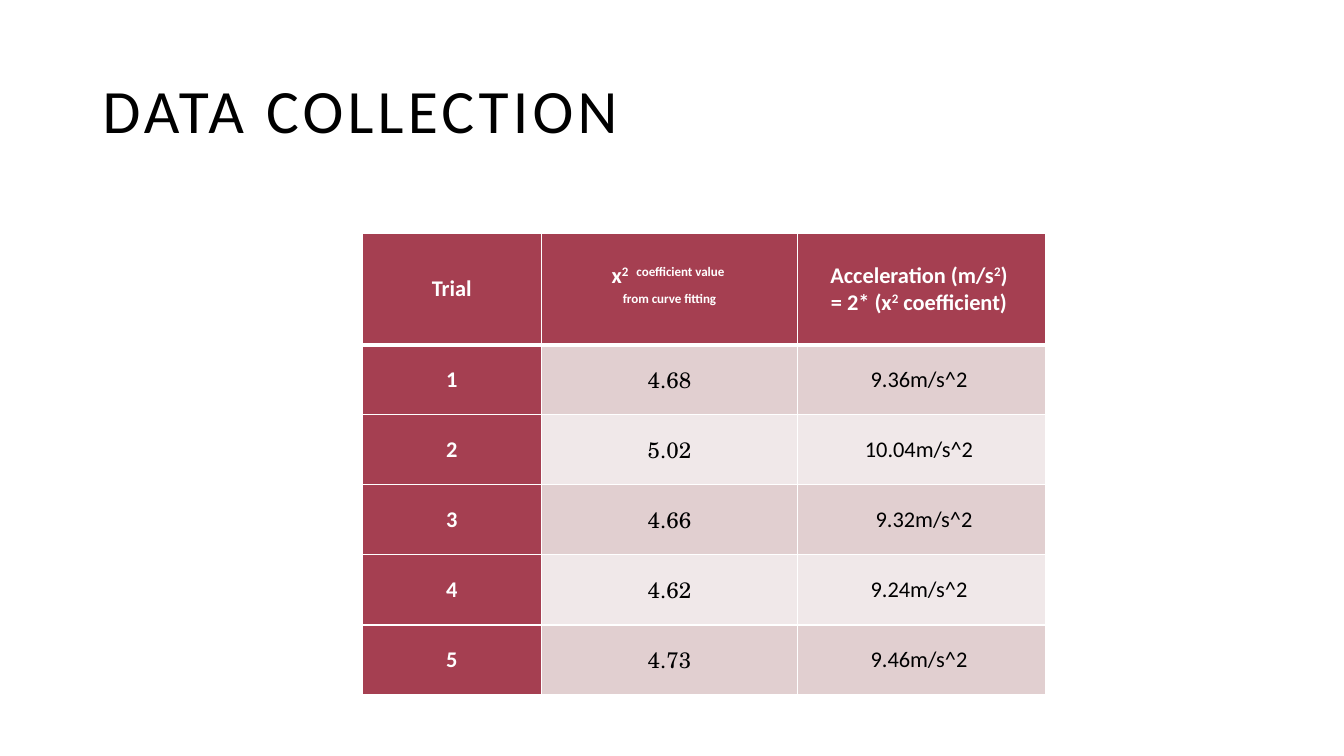
from pptx import Presentation
from pptx import util as u
from pptx.dml.color import RGBColor
from pptx.enum import text
from pptx.oxml import parse_xml
from pptx.oxml.ns import nsdecls

BLACK = RGBColor(0x00, 0x00, 0x00)
WHITE = RGBColor(0xFF, 0xFF, 0xFF)
ROSE = RGBColor(0xA5, 0x3F, 0x51)
BANDS = RGBColor(0xE1, 0xCF, 0xD0), RGBColor(0xF0, 0xE8, 0xE9)
SANS, SERIF = "Calibri", "TeX Gyre Schola"

HEADER = [
    "Trial",
    "x|2| | coefficient value \nfrom curve fitting",
    "Acceleration (m/s|2|) \n= 2* (x|2| coefficient) ",
]
TRIALS = [
    ("1", "4.68", "9.36m/s^2 "),
    ("2", "5.02", "10.04m/s^2 "),
    ("3", "4.66", " 9.32m/s^2"),
    ("4", "4.62", "9.24m/s^2 "),
    ("5", "4.73", "9.46m/s^2 "),
]


def write(p, content, size=16, font=SANS, color=BLACK, bold=False, spacing=0):
    """Fill a paragraph; parts between bars are superscript, newlines are breaks."""
    for i, part in enumerate(content.split("|")):
        for j, line in enumerate(part.split("\n")):
            if j:
                p.add_line_break()
            r = p.add_run()
            r.text = line
            r.font.size, r.font.name, r.font.bold = u.Pt(size), font, bold
            r.font.color.rgb = color
            if i % 2:
                r.font._element.set("baseline", "30000")
            if spacing:
                r.font._element.set("spc", str(spacing * 100))


class Deck:
    """Holds the style and the current slide."""

    def __init__(self, prs):
        """Add a blank slide to the presentation."""
        self.s = prs.slides.add_slide(prs.slide_layouts[6])

    def title(self, content, left, top, width, height):
        """Add the heading, centred vertically in its box."""
        sp = self.s.shapes.add_textbox(*map(u.Inches, (left, top, width, height)))
        tf = sp.text_frame
        tf.word_wrap = True
        tf.vertical_anchor = text.MSO_ANCHOR.MIDDLE
        p = tf.paragraphs[0]
        p.line_spacing = 0.9
        write(p, content, size=44, spacing=3)

    def border(self, cell, side, width):
        """Draw one white cell edge; call before the cell is filled."""
        cell._tc.get_or_add_tcPr().append(parse_xml(
            f'<a:ln{side} {nsdecls("a")} w="{u.Pt(width)}"><a:solidFill>'
            f'<a:srgbClr val="{WHITE}"/></a:solidFill></a:ln{side}>'))

    def cell(self, cell, content, fill, header=False, below_header=False, **fmt):
        """Set the edges, fill and centred text of a cell."""
        widths = {"L": 1, "R": 1, "T": 3 if below_header else 1, "B": 3 if header else 1}
        for side, width in widths.items():
            self.border(cell, side, width)
        cell.fill.solid()
        cell.fill.fore_color.rgb = fill
        cell.margin_left = cell.margin_right = u.Inches(0.07)
        cell.margin_top = cell.margin_bottom = 0
        cell.vertical_anchor = text.MSO_ANCHOR.MIDDLE
        p = cell.text_frame.paragraphs[0]
        p.alignment = text.PP_ALIGN.CENTER
        write(p, content, **fmt)

    def table(self, rows, left, top, widths, heights):
        """Add a table with a coloured header row and first column."""
        size = sum(widths), sum(heights)
        frame = self.s.shapes.add_table(
            len(rows), len(widths), *map(u.Inches, (left, top, *size)))
        table = frame.table
        for col, width in zip(table.columns, widths):
            col.width = u.Inches(width)
        for row, height in zip(table.rows, heights):
            row.height = u.Inches(height)
        for i, row in enumerate(rows):
            for j, content in enumerate(row):
                head = i == 0 or j == 0
                self.cell(
                    table.cell(i, j), content, ROSE if head else BANDS[(i - 1) % 2],
                    header=i == 0, below_header=i == 1, bold=head,
                    color=WHITE if head else BLACK,
                    font=SERIF if j == 1 and not head else SANS)


def main():
    """Build and save the slide."""
    prs = Presentation()
    prs.slide_width, prs.slide_height = u.Inches(13.33), u.Inches(7.5)
    deck = Deck(prs)
    deck.title("DATA COLLECTION", 0.92, 0.4, 11.5, 1.45)
    deck.table([HEADER, *TRIALS], 3.59, 2.32, [1.78, 2.54, 2.46],
               [1.1] + [0.695] * len(TRIALS))
    prs.save("out.pptx")


if __name__ == "__main__":
    main()
